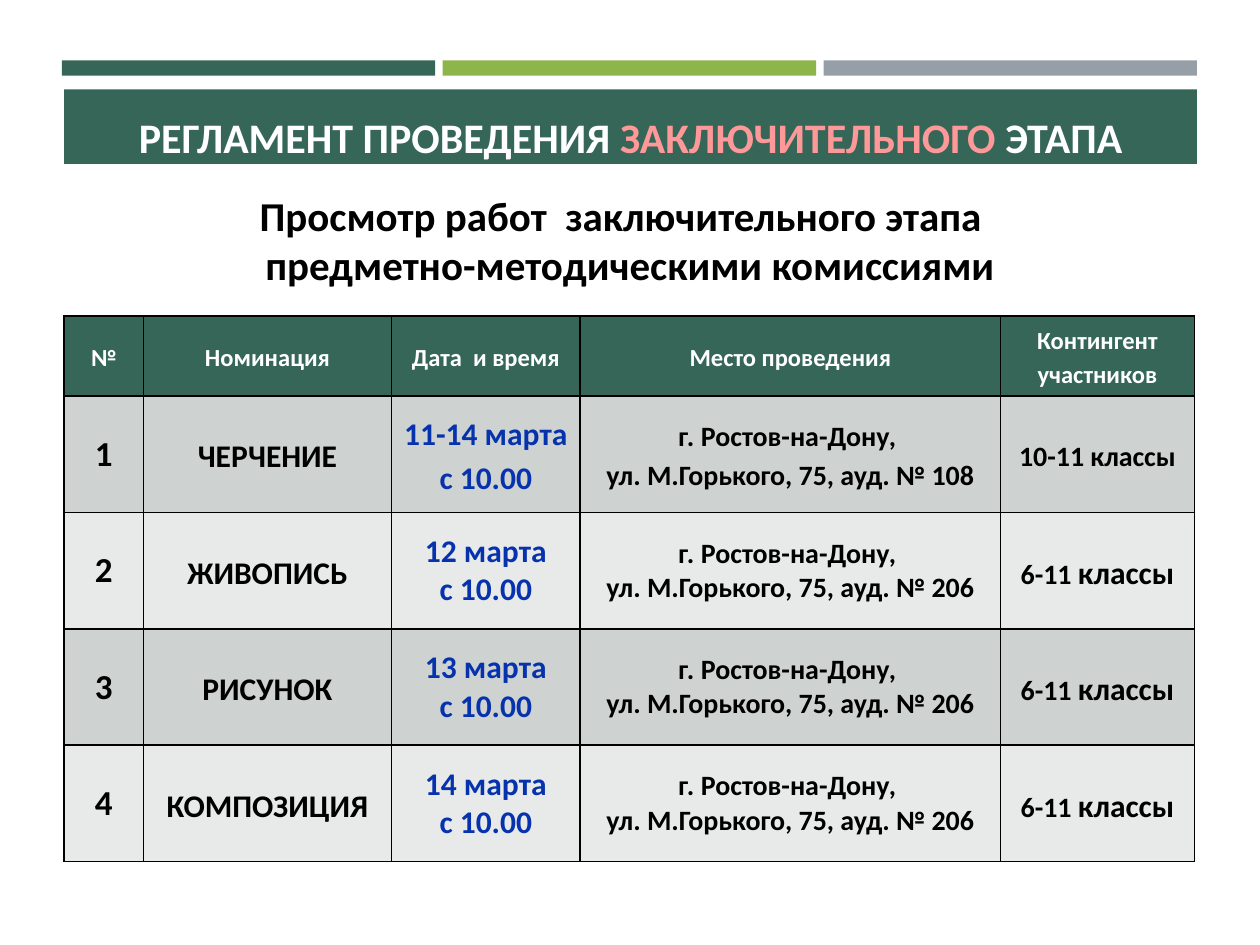
from dataclasses import dataclass

from lxml import etree
from pptx import Presentation, util as u
from pptx.dml.color import RGBColor
from pptx.enum import shapes, text
from pptx.oxml import ns


@dataclass(frozen=True)
class Theme:
    """Colours, font and type sizes of the slide."""
    font: str = "Calibri"
    green: str = "366658"
    lime: str = "8CB64A"
    grey: str = "969FA7"
    pink: str = "FF9999"
    blue: str = "0632AD"
    white: str = "FFFFFF"
    black: str = "000000"
    bands: tuple = ("CED3D1", "E8EAEA")
    heading: float = 24
    subtitle: float = 23.4
    number: float = 20
    large: float = 18
    body: float = 16
    header: float = 14


THEME = Theme()
WIDE = 1.15
COLUMNS = (0.63, 1.97, 1.5, 3.34, 1.54)
HEADER_ROW, BODY_ROW = 0.63, 0.92
HEADERS = ("№", "Номинация", "Дата  и время", "Место проведения", "Контингент участников")
STREET = "ул. М.Горького, 75, ауд. № "
SCHEDULE = (
    ("ЧЕРЧЕНИЕ", "11-14 марта", "108", "10-11 классы", ""),
    ("ЖИВОПИСЬ", "12 марта", "206", "6-11 ", "классы"),
    ("РИСУНОК", "13 марта", "206", "6-11 ", "классы"),
    ("КОМПОЗИЦИЯ", "14 марта", "206", "6-11 ", "классы"),
)


def paint(part, colour):
    """Give a shape or a cell a solid fill."""
    part.fill.solid()
    part.fill.fore_color.rgb = RGBColor.from_string(colour)


def write(frame, paragraphs, spacing=None):
    """Write centred paragraphs of (words, size, colour) runs."""
    frame.word_wrap = True
    frame.vertical_anchor = text.MSO_ANCHOR.MIDDLE
    for index, runs in enumerate(paragraphs):
        paragraph = frame.paragraphs[0] if index == 0 else frame.add_paragraph()
        paragraph.alignment = text.PP_ALIGN.CENTER
        if spacing:
            paragraph.line_spacing = spacing
        for words, size, colour in runs:
            run = paragraph.add_run()
            run.text = words
            run.font.name = THEME.font
            run.font.size = u.Pt(size)
            run.font.bold = True
            run.font.color.rgb = RGBColor.from_string(colour)


def add_stripes(slide, left, top, width, height, gap=0.06):
    """Split the box into three equal coloured bars."""
    colours = (THEME.green, THEME.lime, THEME.grey)
    bar_width = (width - gap * (len(colours) - 1)) / len(colours)
    for index, colour in enumerate(colours):
        bar = slide.shapes.add_shape(
            shapes.MSO_SHAPE.RECTANGLE, u.Inches(left + index * (bar_width + gap)),
            u.Inches(top), u.Inches(bar_width), u.Inches(height))
        bar.shadow.inherit = False
        bar.line.fill.background()
        paint(bar, colour)


def add_heading(slide, left, top, width, height):
    """Turn the title placeholder into the green banner."""
    title = slide.shapes.title
    title.left, title.top = u.Inches(left), u.Inches(top)
    title.width, title.height = u.Inches(width), u.Inches(height)
    paint(title, THEME.green)
    title.text_frame.auto_size = text.MSO_AUTO_SIZE.NONE
    write(title.text_frame, [[
        ("РЕГЛАМЕНТ ПРОВЕДЕНИЯ ", THEME.heading, THEME.white),
        ("ЗАКЛЮЧИТЕЛЬНОГО", THEME.heading, THEME.pink),
        (" ЭТАПА", THEME.heading, THEME.white),
    ]], 1.4)


def add_subtitle(slide, left, top, width, height):
    """Place the two-line subtitle in the box."""
    subtitle = slide.shapes.add_textbox(*map(u.Inches, (left, top, width, height)))
    lines = ("Просмотр работ  заключительного этапа  ", "предметно-методическими комиссиями")
    write(subtitle.text_frame, [[(line, THEME.subtitle, THEME.black)] for line in lines])


def add_borders(cell):
    """Draw a thin black line on each side of a cell, ahead of its fill."""
    properties = cell._tc.get_or_add_tcPr()
    for index, side in enumerate(("lnL", "lnR", "lnT", "lnB")):
        line = etree.Element(ns.qn("a:" + side), w=str(u.Pt(1)))
        fill = etree.SubElement(line, ns.qn("a:solidFill"))
        etree.SubElement(fill, ns.qn("a:srgbClr"), val=THEME.black)
        properties.insert(index, line)


def fill_cell(cell, colour, paragraphs, spacing=None, margins=None):
    """Fill, outline and write one table cell."""
    if margins:
        side, edge = map(u.Inches, margins)
        cell.margin_left = cell.margin_right = side
        cell.margin_top = cell.margin_bottom = edge
    paint(cell, colour)
    add_borders(cell)
    write(cell.text_frame, paragraphs, spacing)
    cell.vertical_anchor = text.MSO_ANCHOR.MIDDLE


def schedule_cells(subject, date, room, grades, grades_end, spacing):
    """Return paragraphs and line spacing for the columns after the number."""
    large, body = THEME.large, THEME.body
    grade_runs = [(grades, body, THEME.black)]
    if grades_end:
        grade_runs.append((grades_end, large, THEME.black))
    return (
        ([[(subject, large, THEME.black)]], WIDE),
        ([[(line, large, THEME.blue)] for line in (date, "с 10.00")], spacing),
        ([[(line, body, THEME.black)] for line in ("г. Ростов-на-Дону, ", STREET + room)], spacing),
        ([grade_runs], WIDE),
    )


def add_schedule(slide, left, top, width, height):
    """Place the schedule table, sharing the box by column and row weights."""
    rows = (HEADER_ROW,) + (BODY_ROW,) * len(SCHEDULE)
    table = slide.shapes.add_table(
        len(rows), len(COLUMNS), *map(u.Inches, (left, top, width, height))).table
    for column, share in zip(table.columns, COLUMNS):
        column.width = u.Inches(width * share / sum(COLUMNS))
    for row, share in zip(table.rows, rows):
        row.height = u.Inches(height * share / sum(rows))
    for column, label in enumerate(HEADERS):
        fill_cell(table.cell(0, column), THEME.green,
                  [[(label, THEME.header, THEME.white)]], WIDE, (0.07, 0.02))
    for number, entry in enumerate(SCHEDULE, 1):
        band = THEME.bands[(number - 1) % 2]
        fill_cell(table.cell(number, 0), band, [[(str(number), THEME.number, THEME.black)]])
        cells = schedule_cells(*entry, spacing=WIDE if number == 1 else None)
        for column, (paragraphs, spacing) in enumerate(cells, 1):
            fill_cell(table.cell(number, column), band, paragraphs, spacing, (0.03, 0))


def main():
    """Build and save the slide."""
    deck = Presentation()
    deck.slide_width, deck.slide_height = u.Inches(10), u.Inches(7.5)
    slide = deck.slides.add_slide(deck.slide_layouts[5])
    add_stripes(slide, 0.49, 0.48, 9.01, 0.12)
    add_heading(slide, 0.51, 0.71, 8.99, 0.59)
    add_schedule(slide, 0.51, 2.51, 8.97, 4.33)
    add_subtitle(slide, 0.5, 1.3, 9, 1.2)
    deck.save("out.pptx")


if __name__ == "__main__":
    main()
